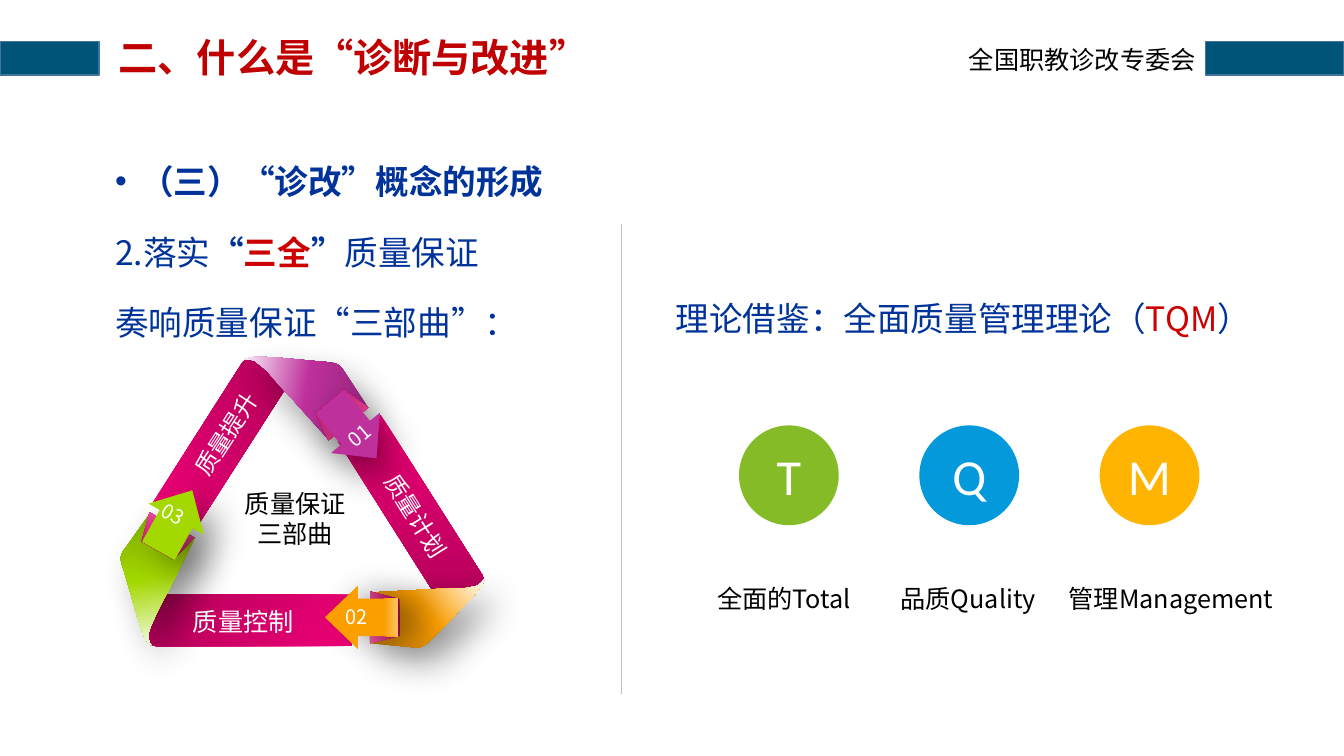
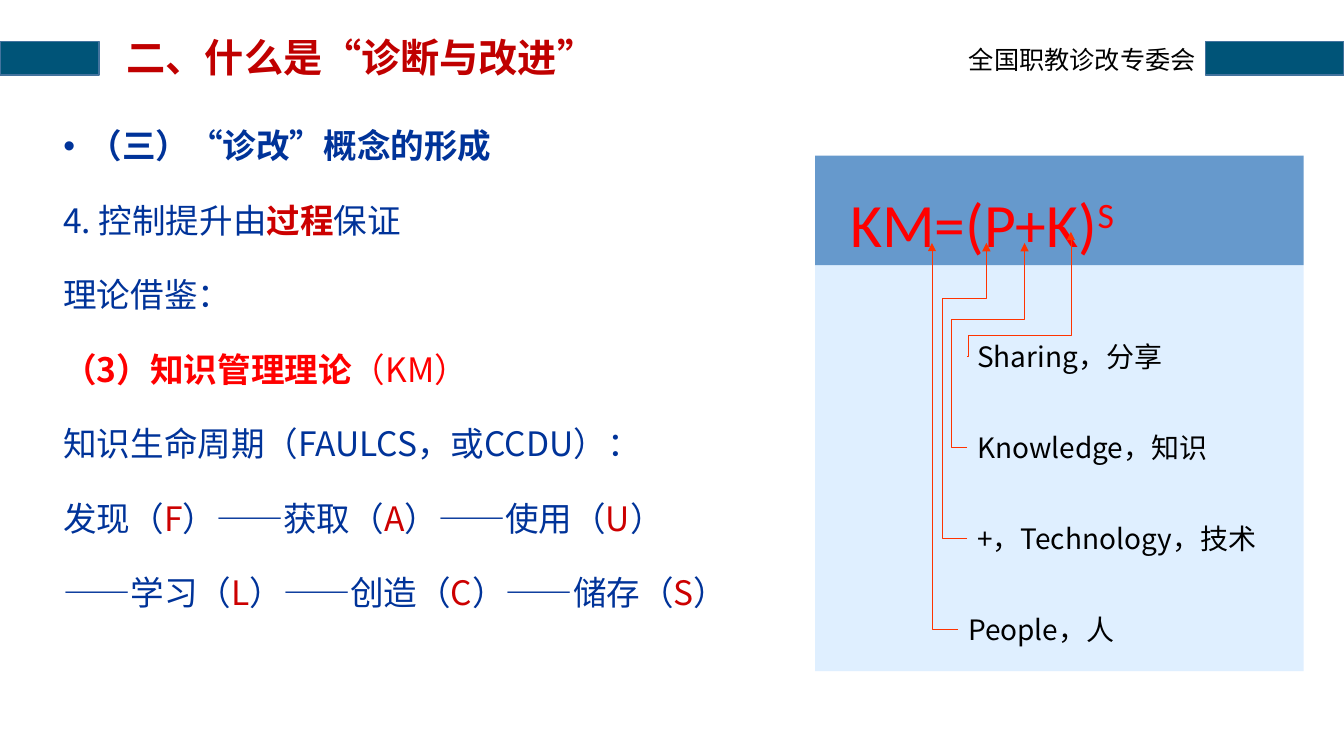
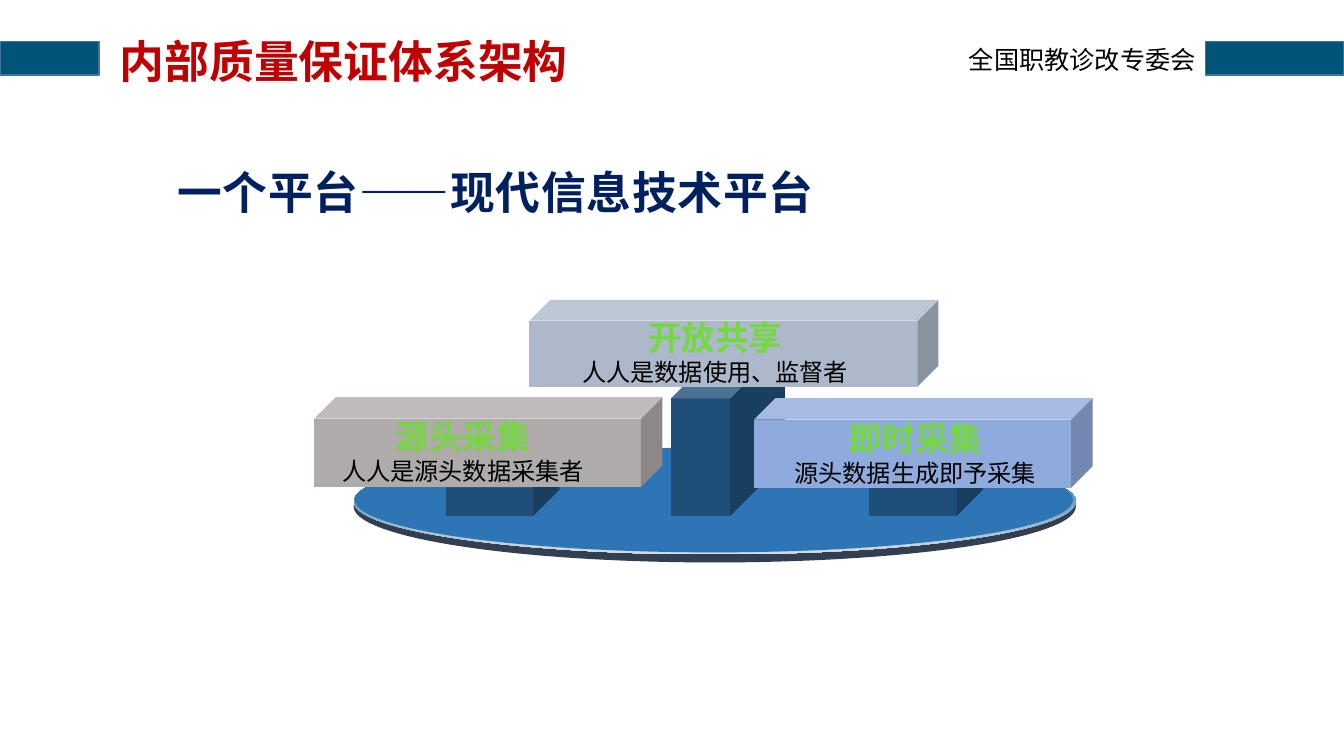
from math import cos, radians, sin

from lxml.etree import SubElement
from pptx import Presentation
from pptx.dml.color import RGBColor
from pptx.enum.lang import MSO_LANGUAGE_ID
from pptx.enum.shapes import MSO_CONNECTOR, MSO_SHAPE
from pptx.enum.text import MSO_ANCHOR, MSO_AUTO_SIZE, PP_ALIGN
from pptx.oxml.ns import qn
from pptx.util import Inches, Pt

BLACK = RGBColor(0x00, 0x00, 0x00)
WHITE = RGBColor(0xFF, 0xFF, 0xFF)
TEAL = RGBColor(0x00, 0x54, 0x78)
BAND_EDGE = RGBColor(0x43, 0x73, 0x9E)
TITLE_RED = RGBColor(0xC0, 0x00, 0x00)
KEY_RED = RGBColor(0xCC, 0x00, 0x00)
BRIGHT_RED = RGBColor(0xFF, 0x00, 0x00)
ARROW_RED = RGBColor(0xFF, 0x33, 0x00)
BODY_BLUE = RGBColor(0x00, 0x33, 0x99)
NAVY = RGBColor(0x00, 0x20, 0x60)
DIVIDER_GREY = RGBColor(0xBF, 0xBF, 0xBF)
T_GREEN = RGBColor(0x85, 0xBB, 0x27)
Q_BLUE = RGBColor(0x04, 0x99, 0xDB)
M_AMBER = RGBColor(0xFF, 0xB4, 0x01)
PINK = RGBColor(0xEE, 0x00, 0x76)
DEEP_PINK = RGBColor(0xB2, 0x00, 0x59)
LIGHT_PINK = RGBColor(0xFF, 0x5C, 0xAD)
PURPLE = RGBColor(0xBE, 0x30, 0x9C)
DEEP_PURPLE = RGBColor(0x8E, 0x24, 0x75)
LIGHT_PURPLE = RGBColor(0xDE, 0x7D, 0xC7)
LIME = RGBColor(0xA3, 0xD8, 0x00)
DEEP_LIME = RGBColor(0x7A, 0xA2, 0x00)
LIGHT_LIME = RGBColor(0xD4, 0xFF, 0x4F)
ORANGE = RGBColor(0xFB, 0x9E, 0x00)
DEEP_ORANGE = RGBColor(0xBC, 0x76, 0x00)
LIGHT_ORANGE = RGBColor(0xFF, 0xC5, 0x64)
PANEL_BLUE = RGBColor(0x99, 0xCC, 0xFF)
FORMULA_BLUE = RGBColor(0x66, 0x99, 0xCC)
LABEL_BLUE = RGBColor(0xDF, 0xEF, 0xFF)
DISC_SHADE = RGBColor(0x33, 0x3F, 0x50)
RIM_BLUE = RGBColor(0x00, 0x66, 0x99)
RIM_LIGHT = RGBColor(0xD5, 0xDB, 0xE3)
DISC_BLUE = RGBColor(0x2E, 0x75, 0xB6)
PILLAR_BLUE = RGBColor(0x1F, 0x4E, 0x79)
BEAM_GREY = RGBColor(0xAF, 0xAB, 0xAB)
BEAM_STEEL = RGBColor(0xAD, 0xB9, 0xCA)
BEAM_BLUE = RGBColor(0x8F, 0xAA, 0xDC)
HEAD_GREEN = RGBColor(0x75, 0xD8, 0x40)

CJK = "Noto Sans CJK SC"
BASE = {"name": CJK, "language_id": MSO_LANGUAGE_ID.SIMPLIFIED_CHINESE,
        "size": Pt(18), "color": BLACK}
TITLE = {"size": Pt(28), "bold": True, "color": TITLE_RED}
BODY = {"size": Pt(24), "bold": False, "color": BODY_BLUE}
LETTER = {"name": "Calibri", "size": Pt(36), "color": WHITE}
STRONG = {"bold": True}
KEY = {"color": KEY_RED}
BRIGHT = {"color": BRIGHT_RED}
CENTER = {"alignment": PP_ALIGN.CENTER}
MIDDLE = {"vertical_anchor": MSO_ANCHOR.MIDDLE}
SNUG = {"word_wrap": False, "auto_size": MSO_AUTO_SIZE.SHAPE_TO_FIT_TEXT}

deck = Presentation()
deck.slide_width, deck.slide_height = Inches(13.34), Inches(7.5)
CELL = deck.slide_height / 75


def place(slide, kind, cells, fill=None, angle=0, shadow=None, rotation=0):
    if kind == "fold":
        spin = complex(cos(radians(rotation)), sin(radians(rotation)))
        edges = [[complex(*point) * CELL / spin for point in edge] for edge in cells]
        corners = [(int(edge[-1].real), int(edge[-1].imag)) for edge in edges]
        builder = slide.shapes.build_freeform(*corners[0], scale=1.0)
        builder.add_line_segments(corners[1:], close=True)
        shape = builder.convert_to_shape()
        segments = list(shape._element.spPr.iter(qn("a:lnTo")))
        for segment, edge in zip(segments, edges[1:]):
            if len(edge) == 3:
                segment.tag = qn("a:cubicBezTo")
                segment[:] = []
                for point in edge:
                    SubElement(segment, qn("a:pt"), x=str(int(point.real - shape.left)),
                               y=str(int(point.imag - shape.top)))
        center = complex(shape.left + shape.width / 2, shape.top + shape.height / 2) * spin
        shape.left = int(center.real - shape.width / 2)
        shape.top = int(center.imag - shape.height / 2)
    else:
        frame = [int(cell * CELL) for cell in cells]
        shape = slide.shapes.add_shape(kind, *frame) if kind else slide.shapes.add_textbox(*frame)
    shape.rotation = rotation
    shape.line.fill.background()
    shape.shadow.inherit = False
    properties = shape._element.spPr
    if isinstance(fill, RGBColor):
        shape.fill.solid()
        shape.fill.fore_color.rgb = fill
    elif fill:
        shape.fill.gradient()
        shape.fill.gradient_angle = 360 - angle
        stops = properties.find(qn("a:gradFill")).find(qn("a:gsLst"))
        stops[:] = []
        for position, color in fill:
            stop = SubElement(stops, qn("a:gs"), pos=str(position * 1000))
            SubElement(stop, qn("a:srgbClr"), val=str(color))
    if shadow is not None:
        cast = SubElement(properties.find(qn("a:effectLst")), qn("a:outerShdw"),
                          blurRad=str(Pt(26)), dist=str(Pt(15)),
                          dir=str(shadow * 60000), rotWithShape="0")
        tint = SubElement(cast, qn("a:srgbClr"), val=str(BLACK))
        SubElement(tint, qn("a:alpha"), val="40000")
    return shape


def write(shape, paragraphs, font={}, layout={}, frame={}):
    text_frame = shape.text_frame
    for attribute, value in {"word_wrap": True, **frame}.items():
        setattr(text_frame, attribute, value)
    for index, runs in enumerate(paragraphs):
        paragraph = text_frame.add_paragraph() if index else text_frame.paragraphs[0]
        for attribute, value in layout.items():
            if index or attribute != "space_before":
                setattr(paragraph, attribute, value)
        for text, change in runs:
            run = paragraph.add_run()
            run.text = text
            style = {**BASE, **font, **change}
            run.font.color.rgb = style.pop("color")
            for attribute, value in style.items():
                setattr(run.font, attribute, value)
            SubElement(run._r.get_or_add_rPr(), qn("a:ea"), typeface=CJK)
    return text_frame


concept, knowledge, platform = slides = [
    deck.slides.add_slide(deck.slide_layouts[6]) for _ in range(3)]
headings = [
    ("二、什么是“诊断与改进”", (10.8, 1.5, 85, 8.8), {}),
    ("二、什么是“诊断与改进”", (11.6, 1.5, 85, 8.8), {}),
    ("内部质量保证体系架构", (10.9, 1.9, 64.6, 8.8), {"size": Pt(32)}),
]
for slide, (heading, cells, change) in zip(slides, headings):
    for left, width in ((0, 9.85), (119.65, 13.75)):
        band = place(slide, MSO_SHAPE.RECTANGLE, (left, 4.1, width, 3.35), TEAL)
        band.line.color.rgb = BAND_EDGE
        band.line.width = Pt(1)
    write(place(slide, None, (94.25, 3.9, 25.4, 4)), [[("全国职教诊改专委会", {})]],
          layout={"alignment": PP_ALIGN.RIGHT})
    write(place(slide, None, cells), [[(heading, change)]], TITLE, {"line_spacing": 0.9}, MIDDLE)

bodies = [
    (concept, (10.45, 13.9, 49.2, 21.5), 1.4, [
        [("（三）“诊改”概念的形成", STRONG)],
        [("2.落实", {}), ("“", STRONG), ("三全", {**KEY, **STRONG}), ("”", STRONG),
         ("质量保证", {})],
        [("奏响质量保证“三部曲”：", {})],
    ]),
    (knowledge, (5.3, 9.95, 80.8, 59.3), 1.5, [
        [("（三）“诊改”概念的形成", STRONG)],
        [("4. 控制提升由", {}), ("过程", {**KEY, **STRONG}), ("保证", {})],
        [("理论借鉴：", {})],
        [("（3）知识管理理论", {**BRIGHT, **STRONG}), ("（KM）", BRIGHT)],
        [("知识生命周期（FAULCS，或CCDU）：", {})],
        [("发现（", {}), ("F", KEY), ("）——获取（", {}), ("A", KEY),
         ("）——使用（", {}), ("U", KEY), ("）", {})],
        [("——学习（", {}), ("L", KEY), ("）——创造（", {}), ("C", KEY),
         ("）——储存（", {}), ("S", KEY), ("）", {})],
    ]),
]
knowledge_panel = place(knowledge, MSO_SHAPE.RECTANGLE, (80.9, 26.3, 48.5, 40.3), PANEL_BLUE)
panel_color = knowledge_panel._element.spPr.find(qn("a:solidFill"))[0]
SubElement(panel_color, qn("a:alpha"), val="31000")
for slide, cells, spacing, paragraphs in bodies:
    body = write(place(slide, None, cells), paragraphs, BODY,
                 {"line_spacing": spacing, "space_before": Pt(10)})
    bullet_format = body.paragraphs[0]._p.get_or_add_pPr()
    bullet_format.set("marL", str(Inches(0.25)))
    bullet_format.set("indent", str(-Inches(0.25)))
    SubElement(bullet_format, qn("a:buFont"), typeface="Arial")
    SubElement(bullet_format, qn("a:buChar"), char="•")

write(place(concept, None, (66.1, 27.05, 60.3, 7.1)),
      [[("理论借鉴：全面质量管理理论（", {}), ("TQM", KEY), ("）", {})]],
      BODY, {"line_spacing": 1.5}, SNUG)
divider = concept.shapes.add_connector(
    MSO_CONNECTOR.STRAIGHT, *[int(cell * CELL) for cell in (61.7, 22.2, 61.7, 68.85)])
divider.line.color.rgb = DIVIDER_GREY
divider.line.width = Pt(0.5)
SubElement(divider._element.spPr, qn("a:effectLst"))

tqm = [
    ("T", T_GREEN, "全面的Total", 70.2, 15.4),
    ("Q", Q_BLUE, "品质Quality", 88.4, 15.7),
    ("M", M_AMBER, "管理Management", 105.1, 23.3),
]
for index, (letter, color, meaning, left, width) in enumerate(tqm):
    circle = place(concept, MSO_SHAPE.OVAL, (73.35 + 17.9 * index, 42.2, 9.9, 9.9), color)
    write(circle, [[(letter, {})]], LETTER, CENTER, MIDDLE)
    write(place(concept, None, (left, 57.35, width, 4)), [[(meaning, {})]], frame=SNUG)

sides = [
    ((14.5, 59, 20.5, 5.1), 180, "质量控制", (15.8, 59.2, 16.7, 4.9), 0, 18),
    ((31.1, 48.3, 19.7, 5), 57.6, "质量计划", (33.5, 49.4, 15.6, 3.5), 58, 16.6),
    ((13.3, 41.4, 17.3, 5), 302.6, "质量提升", (15.2, 41.3, 14.5, 3.5), 303, 16.6),
]
for bar_cells, bar_turn, stage, text_cells, text_turn, size in sides:
    bar = place(concept, MSO_SHAPE.ROUND_1_RECTANGLE, bar_cells,
                [(0, PINK), (100, DEEP_PINK)], 30, rotation=bar_turn)
    if bar_turn == 180:
        bar.adjustments[0] = 0.2
    write(place(concept, None, text_cells, rotation=text_turn), [[(stage, {})]],
          {"size": Pt(size), "color": WHITE}, CENTER, MIDDLE)

corners = [
    ((DEEP_PURPLE, PURPLE, LIGHT_PURPLE), 50.5, 60, 60, 320.5,
     (31.1, 39.5, 5.1, 2.9), (31.9, 39, 6.3, 7.3), [
        [(32.6, 43.6)],
        [(32.9, 43.3), (33.3, 43), (33.7, 42.7)],
        [(34.6, 41.9), (35.5, 41.2), (36.5, 40.4)],
        [(34.2, 36.9)],
        [(33.6, 35.9), (33.1, 36), (32.2, 35.9)],
        [(32, 35.9), (30, 35.7), (28.9, 35.6)],
        [(28, 35.5), (26.3, 35.4), (25.6, 35.4)],
        [(24.8, 35.4), (24.3, 35.6), (24.3, 35.7)],
        [(24.2, 35.8), (24.3, 35.5), (25.3, 35.8)],
        [(25.6, 36.1), (26, 36.3), (26.6, 36.9)],
        [(27.2, 37.6), (28.2, 38.8), (29.1, 39.7)],
        [(31.7, 42.6)],
        [(32.7, 43.7), (32.3, 43.3), (32.6, 43.6)]]),
    ((DEEP_LIME, LIME, LIGHT_LIME), 299.3, 45, 45, 209.3,
     (13.8, 51.9, 5.1, 2.9), (14.25, 48.2, 6.3, 6.9), [
        [(19.3, 53.4)],
        [(18.9, 53.2), (18.5, 52.9), (18.1, 52.7)],
        [(17, 52.1), (16, 51.5), (14.9, 50.9)],
        [(12.5, 54.3)],
        [(11.7, 55.2), (12, 55.7), (12.3, 56.6)],
        [(12.3, 56.7), (12.9, 58.6), (13.2, 59.7)],
        [(13.4, 60.5), (13.9, 62.2), (14.2, 62.9)],
        [(14.5, 63.6), (14.9, 64), (15, 64)],
        [(15.1, 64), (14.8, 64), (14.7, 63)],
        [(14.8, 62.6), (14.9, 62.2), (15.3, 61.4)],
        [(15.6, 60.6), (16.4, 59.2), (17, 58.1)],
        [(18.7, 54.6)],
        [(19.4, 53.3), (19.1, 53.7), (19.3, 53.4)]]),
    ((DEEP_ORANGE, ORANGE, LIGHT_ORANGE), 180, 45, 0, 90,
     (35.65, 59.8, 5.1, 2.9), (32.75, 57.6, 6.3, 7.3), [
        [(36.8, 58.7)],
        [(36.8, 59.2), (36.7, 59.7), (36.7, 60.1)],
        [(36.7, 61.3), (36.7, 62.6), (36.7, 63.8)],
        [(40.9, 64.2)],
        [(42, 64.4), (42.3, 63.9), (42.9, 63.3)],
        [(43, 63.2), (44.4, 61.8), (45.2, 61)],
        [(45.8, 60.3), (47, 59.2), (47.5, 58.5)],
        [(48, 57.9), (48.1, 57.4), (48.1, 57.3)],
        [(48.1, 57.3), (48.2, 57.5), (47.4, 58.1)],
        [(46.9, 58.2), (46.6, 58.3), (45.7, 58.4)],
        [(44.8, 58.4), (43.2, 58.4), (42, 58.5)],
        [(38.1, 58.7)],
        [(36.6, 58.8), (37.1, 58.7), (36.8, 58.7)]]),
]
for colors, fold_turn, fold_cast, arrow_cast, turn, slot_cells, arrow_cells, edges in corners:
    deep, main, light = colors
    place(concept, "fold", edges, [(0, deep), (50, main), (100, WHITE)], 140, fold_cast,
          fold_turn)
    place(concept, MSO_SHAPE.TRAPEZOID, slot_cells, [(0, DEEP_PINK), (100, LIGHT_PINK)], 80,
          rotation=turn)
    arrow = place(concept, MSO_SHAPE.DOWN_ARROW, arrow_cells,
                  [(0, main), (80, main), (100, light)], 270, arrow_cast, turn)
    arrow.adjustments[0], arrow.adjustments[1] = 0.59, 0.52

write(place(concept, None, (22.05, 48.7, 14.5, 5.4)),
      [[("质量保证", {})], [("三部曲", {})]], layout=CENTER, frame=MIDDLE)
for number, left, top, turn in (("01", 33.5, 40.7, 320), ("03", 15.1, 48.8, 30),
                                ("02", 33.3, 58.9, 0)):
    write(place(concept, None, (left, top, 4.7, 4.6), rotation=turn), [[(number, {})]],
          {"size": Pt(14.2), "color": WHITE}, frame=MIDDLE)

formula = write(place(knowledge, MSO_SHAPE.RECTANGLE, (80.9, 15.45, 48.5, 10.85), FORMULA_BLUE),
                [[("KM=(P+K)", {}), ("S", {})]],
                {"name": "Calibri", "size": Pt(44), "color": BRIGHT_RED},
                {"alignment": PP_ALIGN.JUSTIFY, "line_spacing": 1.3},
                {"vertical_anchor": MSO_ANCHOR.TOP, "margin_left": Inches(0.35),
                 "margin_top": Inches(0.08), "margin_right": Inches(0.08), "margin_bottom": 0})
formula.paragraphs[0].runs[1]._r.get_or_add_rPr().set("baseline", "30000")

terms = [
    ("Sharing，分享", (96, 33.2, 20.7, 4.4)),
    ("Knowledge，知识", (96, 42.2, 25.5, 4.4)),
    ("People，人", (95.1, 60.3, 16.8, 4.4)),
    ("+，Technology，技术", (96, 51.25, 30.7, 4.4)),
]
for term, cells in terms:
    write(place(knowledge, None, cells, LABEL_BLUE), [[(term, {})]], {"size": Pt(20)}, frame=SNUG)

links = [
    ((96, 24.1, 97.9, 53.4), (-132300, 81200)),
    ((96, 24.1, 101.7, 44.4), (-26800, 62900)),
    ((96, 23, 106.3, 35.4), (1300, 17300)),
    ((92.5, 24.1, 95.1, 62.45), ()),
]
for cells, bends in links:
    link = knowledge.shapes.add_connector(
        MSO_CONNECTOR.ELBOW, *[int(cell * CELL) for cell in cells])
    link.line.color.rgb = ARROW_RED
    link.line.width = Pt(0.5)
    properties = link._element.spPr
    transform = properties.find(qn("a:xfrm"))
    transform.set("rot", str(180 * 60000))
    if bends:
        transform.set("flipH", "1")
    geometry = properties.find(qn("a:prstGeom"))
    geometry.set("prst", f"bentConnector{len(bends) + 2}")
    for index, bend in enumerate(bends, 1):
        SubElement(geometry.find(qn("a:avLst")), qn("a:gd"), name=f"adj{index}", fmla=f"val {bend}")
    SubElement(properties.find(qn("a:ln")), qn("a:tailEnd"), type="triangle")
    SubElement(properties, qn("a:effectLst"))

discs = [
    ((35.1, 44.7, 71.7, 11.1), DISC_SHADE),
    ((35.1, 44.5, 71.7, 10.5), [(0, RIM_BLUE), (100, RIM_LIGHT)]),
    ((35.2, 44.4, 71.3, 10.4), DISC_BLUE),
]
for cells, fill in discs:
    place(platform, MSO_SHAPE.OVAL, cells, fill, 90)
supports = [
    ((44.3, 45.7, 11.25, 5.5), (31.2, 39.4, 34.55, 8.9), BEAM_GREY),
    ((66.6, 34.1, 11.3, 17.1), (52.55, 29.75, 40.6, 8.6), BEAM_STEEL),
    ((86.3, 45.7, 11.3, 5.5), (74.85, 39.5, 33.6, 8.9), BEAM_BLUE),
]
for pillar_cells, beam_cells, beam_color in supports:
    for cells, color, depth in ((pillar_cells, PILLAR_BLUE, 0.48), (beam_cells, beam_color, 0.24)):
        place(platform, MSO_SHAPE.CUBE, cells, color).adjustments[0] = depth

principles = [
    ("源头采集", "人人是源头数据采集者", (31.35, 40.8, 29.2, 8)),
    ("即时采集", "源头数据生成即予采集", (76.25, 41, 29.2, 8)),
    ("开放共享", "人人是数据使用、监督者", (53.45, 30.95, 35.1, 8)),
]
for principle, detail, cells in principles:
    write(place(platform, None, cells),
          [[(principle, {"size": Pt(24), "bold": True, "color": HEAD_GREEN})], [(detail, {})]],
          {"size": Pt(17.3)}, CENTER)

slogan = write(place(platform, None, (16.3, 16.2, 66.6, 6.2)),
               [[("一个平台——现代信息技术平台", {})]],
               {"size": Pt(32), "bold": True, "color": NAVY}, {"line_spacing": 0.9},
               {"margin_left": Inches(0.13), "margin_right": Inches(0.13),
                "margin_top": Inches(0.07), "margin_bottom": Inches(0.07)})
slogan.paragraphs[0].runs[0]._r.get_or_add_rPr().set("spc", "50")

deck.save("out.pptx")
